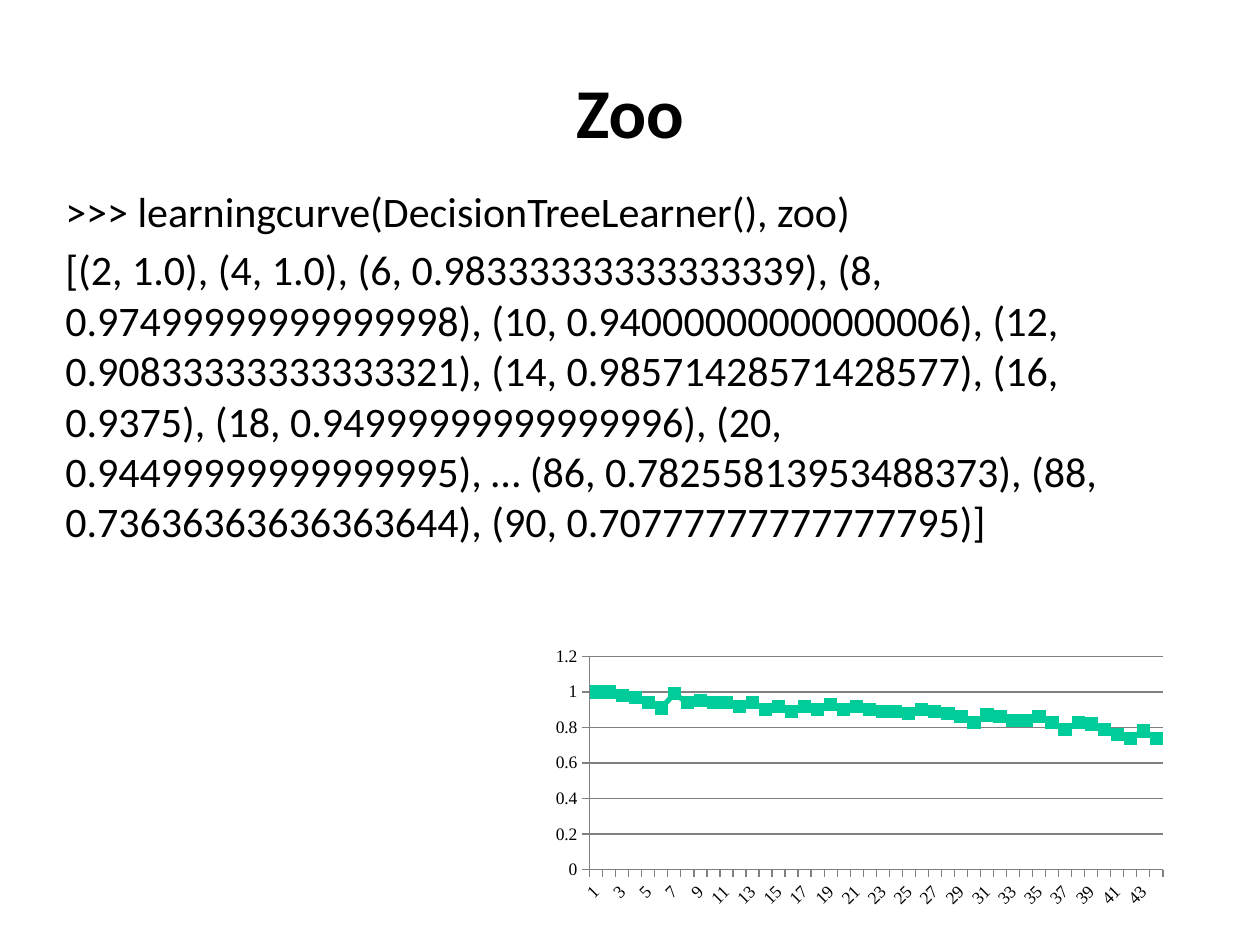
import pptx
import pptx.chart.data
import pptx.dml.color
import pptx.enum.chart
import pptx.enum.text
import pptx.oxml
import pptx.oxml.ns
import pptx.util
from dataclasses import dataclass

Inches = pptx.util.Inches
Pt = pptx.util.Pt
RGB = pptx.dml.color.RGBColor.from_string


@dataclass
class Theme:
    ink: str = "000000"
    grid: str = "808080"
    accent: str = "00CC99"
    font: str = "Calibri"
    chart_font: str = "Times New Roman"
    title_size: int = 40
    body_size: int = 24
    chart_size: int = 10


class Deck:
    def __init__(self, theme):
        self.theme = theme
        self.prs = pptx.Presentation()
        self.prs.slide_width, self.prs.slide_height = Inches(10), Inches(7.5)
        self.s = self.prs.slides.add_slide(self.prs.slide_layouts[6])

    def text(self, box, paragraphs, size, bold=False, before=0,
             align=pptx.enum.text.PP_ALIGN.LEFT, anchor=pptx.enum.text.MSO_ANCHOR.TOP):
        tf = self.s.shapes.add_textbox(*map(Inches, box)).text_frame
        tf.word_wrap = True
        tf.vertical_anchor = anchor
        for i, text in enumerate(paragraphs):
            p = tf.add_paragraph() if i else tf.paragraphs[0]
            p.alignment = align
            p.space_before = Pt(before)
            r = p.add_run()
            r.text = text
            r.font.name = self.theme.font
            r.font.size = Pt(size)
            r.font.bold = bold
            r.font.color.rgb = RGB(self.theme.ink)

    def line_chart(self, box, name, values, plot):
        theme = self.theme
        data = pptx.chart.data.CategoryChartData()
        data.categories = [str(n) for n in range(1, len(values) + 1)]
        data.add_series(name, values)
        kind = pptx.enum.chart.XL_CHART_TYPE.LINE_MARKERS
        chart = self.s.shapes.add_chart(kind, *map(Inches, box), data).chart
        chart.has_legend = chart.has_title = False
        chart.font.name = theme.chart_font
        chart.font.size = Pt(theme.chart_size)
        chart.font.color.rgb = RGB(theme.ink)
        chart.plots[0].vary_by_categories = False

        series = chart.plots[0].series[0]
        series.smooth = False
        series.format.line.color.rgb = RGB(theme.accent)
        series.format.line.width = Pt(3)
        series.marker.style = pptx.enum.chart.XL_MARKER_STYLE.SQUARE
        series.marker.size = 7
        for fmt in (series.marker.format.fill, series.marker.format.line.fill):
            fmt.solid()
            fmt.fore_color.rgb = RGB(theme.accent)

        value, category = chart.value_axis, chart.category_axis
        value.minimum_scale, value.maximum_scale, value.major_unit = 0, 1.2, 0.2
        value.has_major_gridlines = True
        value.tick_labels.number_format = "General"
        value.tick_labels.number_format_is_linked = False
        for line in (value.format.line, category.format.line,
                     value.major_gridlines.format.line):
            line.color.rgb = RGB(theme.grid)
            line.width = Pt(0.75)
        for axis in (value, category):
            axis.major_tick_mark = pptx.enum.chart.XL_TICK_MARK.OUTSIDE
        category.tick_labels.font.size = Pt(theme.chart_size)
        ns = pptx.oxml.ns
        body = category._element.find(ns.qn("c:txPr")).find(ns.qn("a:bodyPr"))
        body.set("rot", "-2700000")
        skip = pptx.oxml.parse_xml(f'<c:tickLblSkip {ns.nsdecls("c")} val="2"/>')
        category._element.find(ns.qn("c:noMultiLvlLbl")).addprevious(skip)

        sizes = "".join(f'<c:{k} val="{v}"/>' for k, v in zip("xywh", plot))
        layout = pptx.oxml.parse_xml(
            f'<c:layout {ns.nsdecls("c")}><c:manualLayout><c:layoutTarget val="inner"/>'
            f'<c:xMode val="edge"/><c:yMode val="edge"/>{sizes}</c:manualLayout></c:layout>')
        area = chart._chartSpace.chart.plotArea
        for old in area.findall(ns.qn("c:layout")):
            area.remove(old)
        area.insert(0, layout)


theme = Theme()
deck = Deck(theme)
deck.text((0.75, 0.25, 8.5, 1.25), ["Zoo"], theme.title_size, bold=True,
          align=pptx.enum.text.PP_ALIGN.CENTER, anchor=pptx.enum.text.MSO_ANCHOR.MIDDLE)
deck.text((0.42, 1.42, 8.5, 4.5), [
    ">>> learningcurve(DecisionTreeLearner(), zoo)",
    "[(2, 1.0), (4, 1.0), (6, 0.98333333333333339), (8, 0.97499999999999998), "
    "(10, 0.94000000000000006), (12, 0.90833333333333321), (14, 0.98571428571428577), "
    "(16, 0.9375), (18, 0.94999999999999996), (20, 0.94499999999999995), "
    "\u2026 (86, 0.78255813953488373), (88, 0.73636363636363644), (90, 0.70777777777777795)]",
], theme.body_size, before=4.8)
accuracy = [
    1, 1, 0.98, 0.97, 0.94, 0.91, 0.99, 0.94, 0.95, 0.94, 0.94,
    0.92, 0.94, 0.9, 0.92, 0.89, 0.92, 0.9, 0.93, 0.9, 0.92, 0.9,
    0.89, 0.89, 0.88, 0.9, 0.89, 0.88, 0.86, 0.83, 0.87, 0.86, 0.84,
    0.84, 0.86, 0.83, 0.79, 0.83, 0.82, 0.79, 0.76, 0.74, 0.78, 0.74,
]
deck.line_chart((4.33, 5.08, 5, 2.17), "Series 1", accuracy, (0.07, 0.06, 0.91, 0.78))
deck.prs.save("out.pptx")
